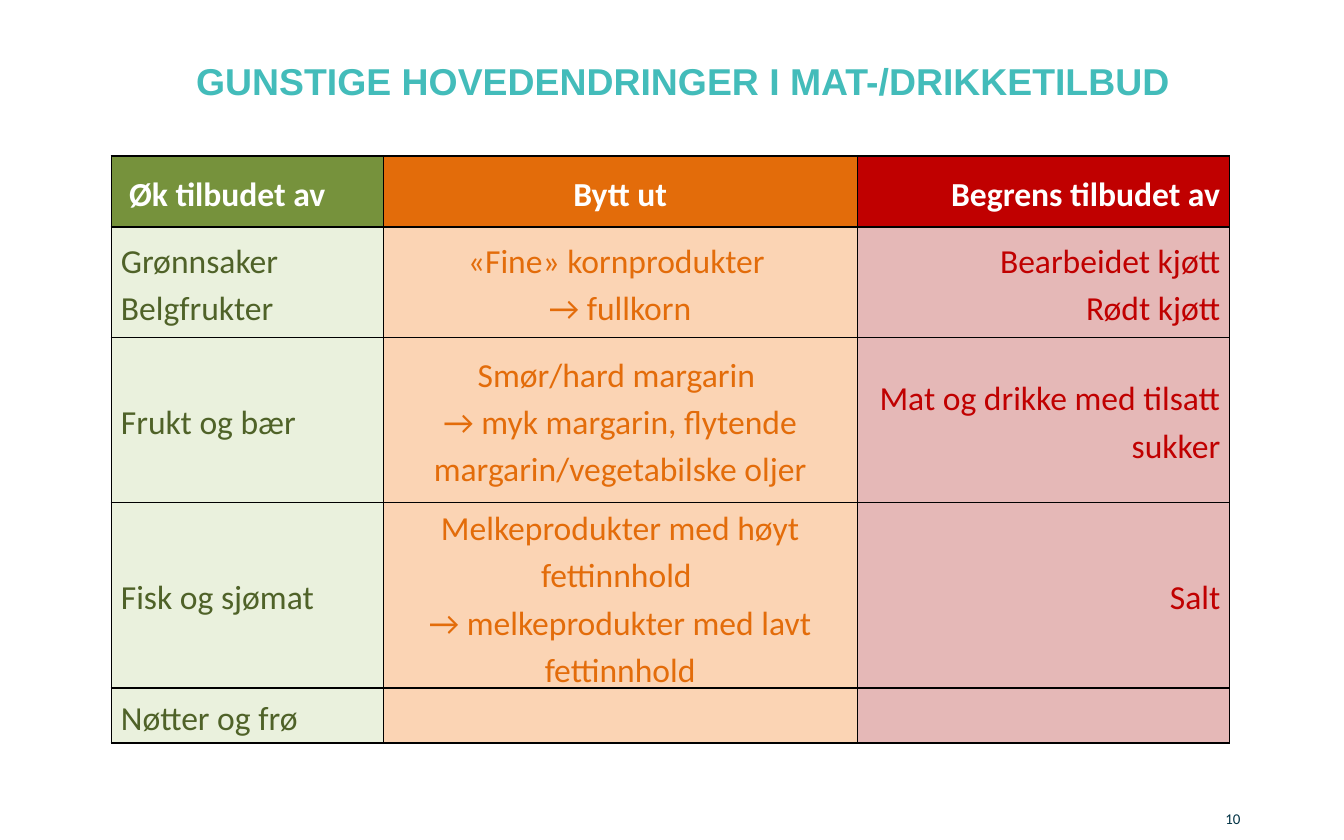
"""Build a slide with a table of recommended changes in food and drink offers."""
from dataclasses import dataclass

from lxml import etree
from pptx import Presentation
from pptx import util as u
from pptx.dml.color import RGBColor
from pptx.enum import text
from pptx.oxml.ns import qn

ALIGN = text.PP_ALIGN
MIDDLE = text.MSO_ANCHOR.MIDDLE
ROW_HEIGHTS = (0.53, 0.82, 1.23, 1.38, 0.41)
THICK_RULES = (0, 1, 4, 5)


@dataclass(frozen=True)
class Column:
    width: float
    align: ALIGN
    head: str
    head_fill: str
    body_fill: str
    ink: str
    cells: tuple[tuple[str, ...], ...]
    head_inset: float = 0.07


COLUMNS = (
    Column(2.02, ALIGN.LEFT, "Øk tilbudet av", "76923C", "EAF1DD", "4F6228",
           (("Grønnsaker", "Belgfrukter"), ("Frukt og bær",),
            ("Fisk og sjømat",), ("Nøtter og frø",)), head_inset=0.13),
    Column(3.53, ALIGN.CENTER, "Bytt ut", "E36C0A", "FBD4B4", "E36C0A",
           (("«Fine» kornprodukter \n→ fullkorn",),
            ("Smør/hard margarin \n→ myk margarin, flytende margarin/vegetabilske oljer",),
            ("Melkeprodukter med høyt fettinnhold \n→ melkeprodukter med lavt fettinnhold",),
            ())),
    Column(2.77, ALIGN.RIGHT, "Begrens tilbudet av", "C00000", "E5B8B7", "C00000",
           (("Bearbeidet kjøtt", "Rødt kjøtt"), ("Mat og drikke med tilsatt sukker",),
            ("Salt",), ())),
)


def rgb(value: str) -> RGBColor:
    return RGBColor.from_string(value)


def add_text(p, content: str, size: float, color: str, font: str = "Calibri",
             bold: bool = False, align: ALIGN = ALIGN.LEFT) -> None:
    p.alignment = align
    for i, line in enumerate(content.split("\n")):
        if i:
            p.add_line_break()
        r = p.add_run()
        r.text = line
        r.font.name, r.font.size, r.font.bold = font, u.Pt(size), bold
        r.font.color.rgb = rgb(color)


def add_label(s, box: tuple[float, ...], content: str, **style) -> None:
    sp = s.shapes.add_textbox(*map(u.Inches, box))
    tf = sp.text_frame
    tf.word_wrap = True
    tf.vertical_anchor = MIDDLE
    tf.margin_left = tf.margin_right = tf.margin_top = tf.margin_bottom = 0
    add_text(tf.paragraphs[0], content, **style)


def set_borders(cell, widths: dict[str, float]) -> None:
    tc_pr = cell._tc.get_or_add_tcPr()
    for i, (side, width) in enumerate(widths.items()):
        ln = etree.Element(qn(f"a:ln{side}"), w=str(u.Pt(width)))
        fill = etree.SubElement(ln, qn("a:solidFill"))
        etree.SubElement(fill, qn("a:srgbClr"), val="000000")
        tc_pr.insert(i, ln)


def fill_cell(cell, column: Column, row: int) -> None:
    head = row == 0
    cell.fill.solid()
    cell.fill.fore_color.rgb = rgb(column.head_fill if head else column.body_fill)
    cell.vertical_anchor = MIDDLE
    cell.margin_left = u.Inches(column.head_inset if head else 0.07)
    cell.margin_right = u.Inches(0.07)
    cell.margin_top = cell.margin_bottom = 0
    tf = cell.text_frame
    for i, line in enumerate((column.head,) if head else column.cells[row - 1]):
        p = tf.add_paragraph() if i else tf.paragraphs[0]
        p.line_spacing = 1.15
        add_text(p, line, 18, "FFFFFF" if head else column.ink,
                 bold=head, align=column.align)


def add_offer_table(s, left: float, top: float) -> None:
    width = sum(c.width for c in COLUMNS)
    table = s.shapes.add_table(
        len(ROW_HEIGHTS), len(COLUMNS), u.Inches(left), u.Inches(top),
        u.Inches(width), u.Inches(sum(ROW_HEIGHTS))).table
    for row, height in enumerate(ROW_HEIGHTS):
        table.rows[row].height = u.Inches(height)
    for col, column in enumerate(COLUMNS):
        table.columns[col].width = u.Inches(column.width)
        for row in range(len(ROW_HEIGHTS)):
            cell = table.cell(row, col)
            fill_cell(cell, column, row)
            set_borders(cell, {
                "L": 1 if col == 0 else 0.5,
                "R": 1 if col == len(COLUMNS) - 1 else 0.5,
                "T": 1 if row in THICK_RULES else 0.5,
                "B": 1 if row + 1 in THICK_RULES else 0.5,
            })


def main() -> None:
    prs = Presentation()
    prs.slide_width, prs.slide_height = u.Inches(10), u.Inches(6.25)
    s = prs.slides.add_slide(prs.slide_layouts[6])
    add_label(s, (1.46, 0.37, 7.9, 0.46),
              "GUNSTIGE HOVEDENDRINGER I MAT-/DRIKKETILBUD",
              size=20, color="43BCBA", font="Arial", bold=True)
    add_label(s, (8.52, 6.03, 0.71, 0.12), "10",
              size=8, color="003244", align=ALIGN.RIGHT)
    add_offer_table(s, 0.83, 1.16)
    prs.save("out.pptx")


if __name__ == "__main__":
    main()
